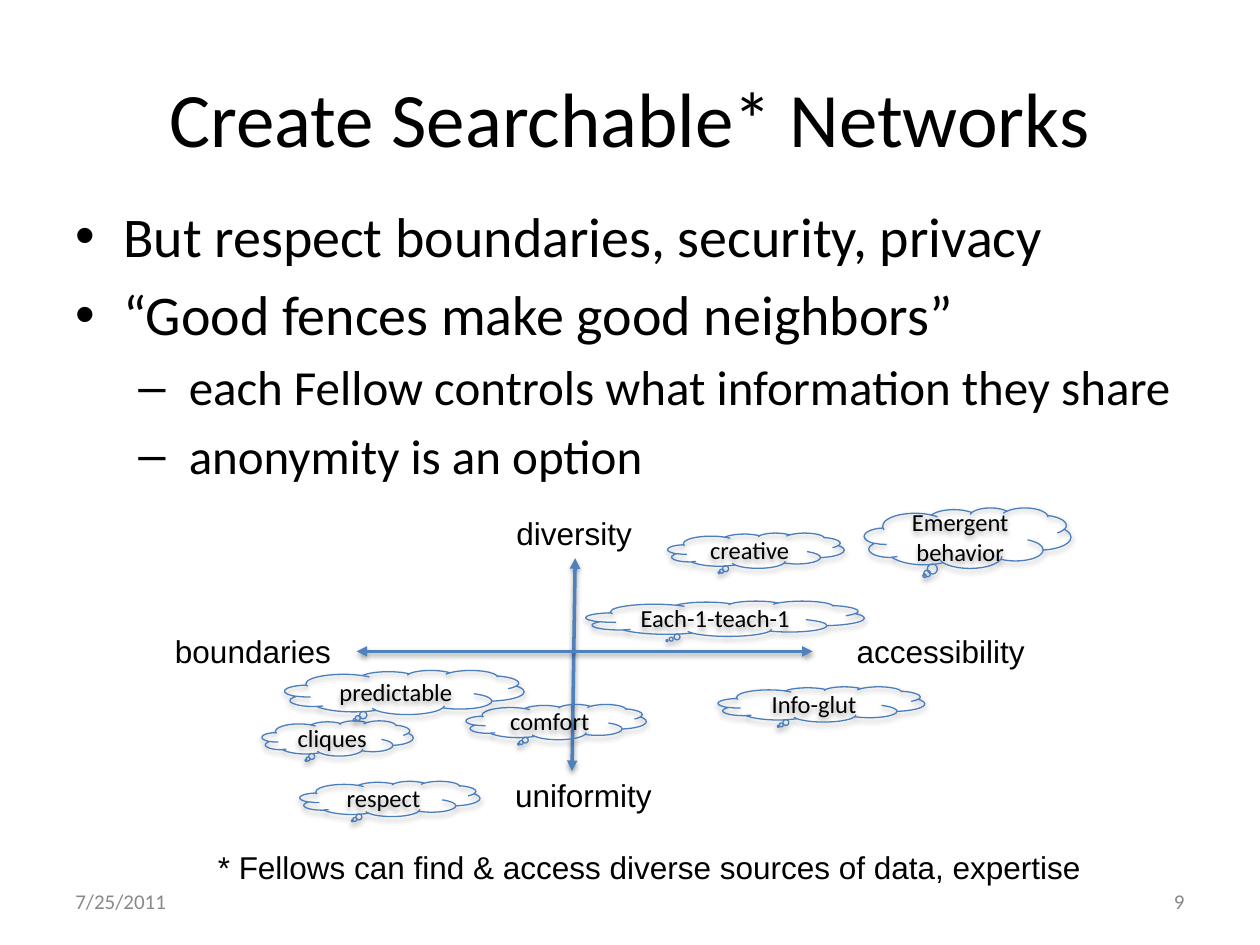
from pptx import Presentation
from pptx.dml.color import RGBColor
from pptx.enum.shapes import MSO_CONNECTOR as CONN, MSO_SHAPE as SHAPE
from pptx.enum.text import MSO_ANCHOR as ANCHOR, MSO_AUTO_SIZE as AUTO, PP_ALIGN as ALIGN
from pptx.oxml.ns import qn
from pptx.util import Pt
from lxml.etree import SubElement

PX = 9144  # 100 px to the inch


def px(n):
    return n * PX


def rgb(color):
    return RGBColor.from_string(color)


class Painter:
    """Holds the style and the current slide."""
    HEAD, BODY = "Calibri", "Arial"
    INK, GREY, AXIS, CLOUD = "000000", "898989", "4F81BD", "4B7EBC"

    def __init__(self, slide):
        self.s = slide

    def run(self, p, text, size, font, color, align=ALIGN.LEFT):
        p.alignment = align
        r = p.add_run()
        r.text = text
        r.font.size, r.font.name = Pt(size), font
        r.font.color.rgb = rgb(color)

    def shadow(self, sp, alpha, dist):
        effects = SubElement(sp._element.spPr, qn("a:effectLst"))
        outer = SubElement(effects, qn("a:outerShdw"), blurRad=str(Pt(3.1)),
                           dist=str(Pt(dist)), dir="5400000", rotWithShape="0")
        color = SubElement(outer, qn("a:srgbClr"), val=self.INK)
        SubElement(color, qn("a:alpha"), val=str(alpha * 1000))

    def title(self, text, box):
        sp = self.s.shapes.title
        sp.left, sp.top, sp.width, sp.height = map(px, box)
        tf = sp.text_frame
        tf.vertical_anchor = ANCHOR.MIDDLE
        self.run(tf.paragraphs[0], text, 44, self.HEAD, self.INK, ALIGN.CENTER)

    def text(self, text, box, size=18, font=BODY, color=INK, align=ALIGN.LEFT,
             anchor=ANCHOR.TOP, wrap=True):
        sp = self.s.shapes.add_textbox(*map(px, box))
        tf = sp.text_frame
        tf.word_wrap, tf.vertical_anchor = wrap, anchor
        tf.auto_size = AUTO.NONE if anchor == ANCHOR.MIDDLE else AUTO.SHAPE_TO_FIT_TEXT
        self.run(tf.paragraphs[0], text, size, font, color, align)
        return sp

    def bullets(self, items, box):
        # level: bullet, text indent, hanging indent, size
        levels = [("•", 38, 38, 32), ("–", 90, 40, 28)]
        tf = self.s.shapes.add_textbox(*map(px, box)).text_frame
        tf.word_wrap = True
        for i, (level, text) in enumerate(items):
            mark, left, hang, size = levels[level]
            p = tf.add_paragraph() if i else tf.paragraphs[0]
            p.level = level
            pPr = p._p.get_or_add_pPr()
            pPr.set("marL", str(px(left)))
            pPr.set("indent", str(px(-hang)))
            SubElement(pPr, qn("a:buFont"), typeface=self.BODY)
            SubElement(pPr, qn("a:buChar"), char=mark)
            if i:
                p.space_before = Pt(size * 0.2)
            self.run(p, text, size, self.HEAD, self.INK)

    def axis(self, start, end, joined=None):
        c = self.s.shapes.add_connector(CONN.STRAIGHT, *map(px, start + end))
        if joined is not None:
            c.begin_connect(joined, 2)
        c.line.color.rgb, c.line.width = rgb(self.AXIS), Pt(2)
        ln = c._element.spPr.find(qn("a:ln"))
        for tip in ("a:headEnd", "a:tailEnd"):
            SubElement(ln, qn(tip), type="triangle")
        self.shadow(c, 38, 1.6)

    def cloud(self, lines, box):
        sp = self.s.shapes.add_shape(SHAPE.CLOUD_CALLOUT, *map(px, box))
        sp.fill.background()
        sp.line.color.rgb, sp.line.width = rgb(self.CLOUD), Pt(0.75)
        self.shadow(sp, 35, 1.8)
        tf = sp.text_frame
        tf.vertical_anchor = ANCHOR.MIDDLE
        for i, line in enumerate(lines):
            p = tf.add_paragraph() if i else tf.paragraphs[0]
            self.run(p, line, 14, self.HEAD, self.INK, ALIGN.CENTER)


def main():
    prs = Presentation()
    prs.slide_width, prs.slide_height = px(1000), px(750)
    d = Painter(prs.slides.add_slide(prs.slide_layouts[5]))

    # Title and bullets
    d.title("Create Searchable* Networks", (50, 30, 900, 125))
    d.bullets([(0, "But respect boundaries, security, privacy"),
               (0, "“Good fences make good neighbors”"),
               (1, "each Fellow controls what information they share"),
               (1, "anonymity is an option")], (50, 155, 900, 495))

    # Footer and footnote
    for text, left, align in (("7/25/2011", 50, ALIGN.LEFT), ("9", 717, ALIGN.RIGHT)):
        d.text(text, (left, 695, 233, 40), 12, d.HEAD, d.GREY, align, ANCHOR.MIDDLE)
    d.text("* Fellows can find & access diverse sources of data, expertise",
           (163, 668, 708, 40))

    # Axis labels
    labels = {}
    for text, left, top, width in (("accessibility", 670, 497, 155),
                                   ("boundaries", 129, 497, 145),
                                   ("diversity", 400, 403, 113),
                                   ("uniformity", 399, 611, 130)):
        labels[text] = d.text(text, (left, top, width, 40), wrap=False)

    # Axes
    d.axis((457, 443), (454, 612), labels["diversity"])
    d.axis((283, 517), (645, 517))

    # Clouds
    for lines, left, top, width, height in (
            (["cliques"], 208, 572, 120, 28),
            (["respect"], 238, 620, 143, 28),
            (["creative"], 530, 423, 140, 28),
            (["Emergent", "behavior"], 686, 403, 164, 48),
            (["Info-glut"], 570, 545, 164, 28),
            (["Each-1-teach-1"], 465, 477, 221, 28),
            (["comfort"], 370, 559, 143, 28),
            (["predictable"], 226, 532, 190, 35)):
        d.cloud(lines, (left, top, width, height))

    prs.save("out.pptx")


if __name__ == "__main__":
    main()
